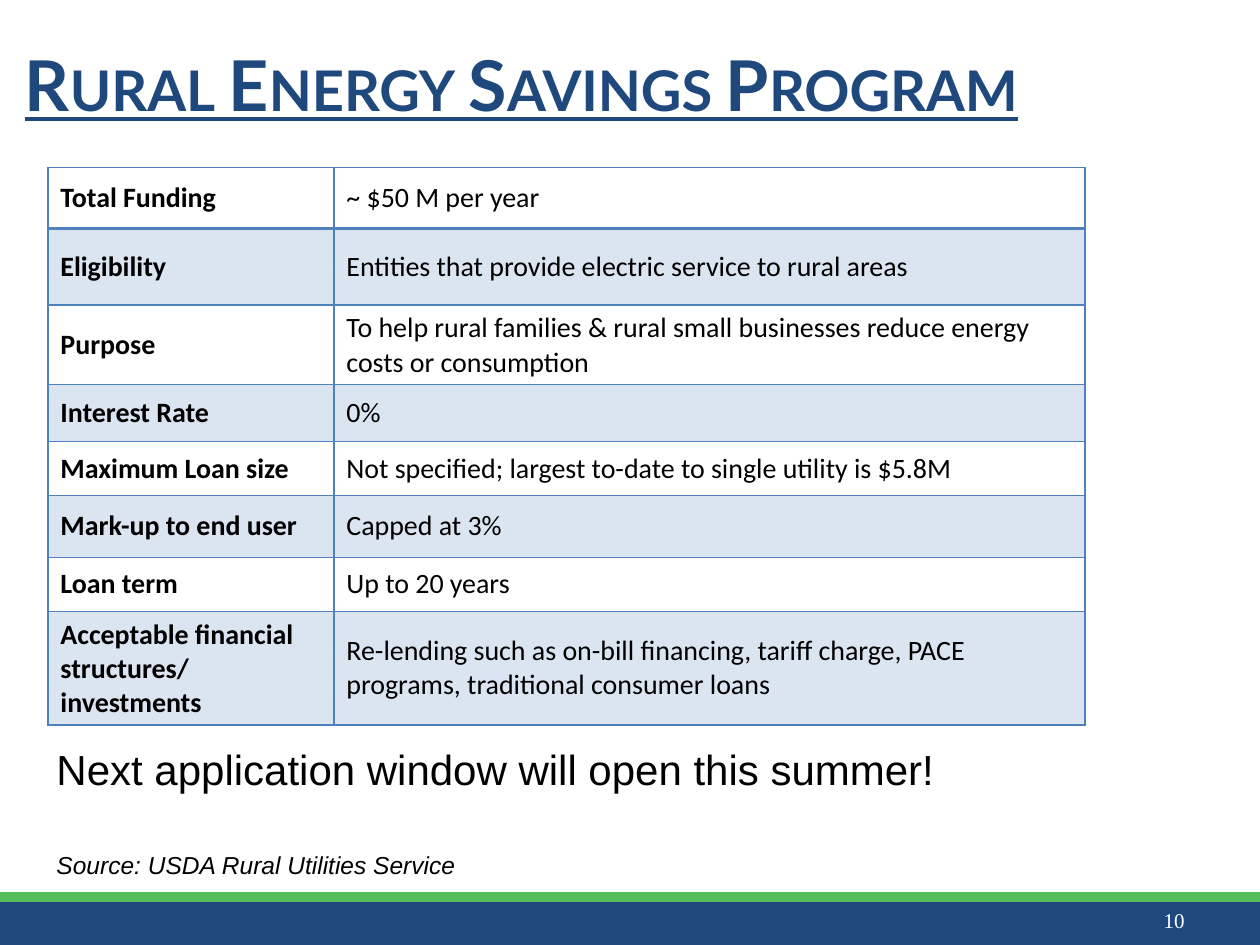
from dataclasses import dataclass

from lxml import etree
from pptx import Presentation
from pptx.dml.color import RGBColor
from pptx.enum.shapes import MSO_SHAPE
from pptx.enum.text import MSO_ANCHOR, PP_ALIGN
from pptx.oxml.ns import qn
from pptx.util import Inches, Pt

RECT = MSO_SHAPE.RECTANGLE
TOP, MIDDLE = MSO_ANCHOR.TOP, MSO_ANCHOR.MIDDLE
LEFT, RIGHT = PP_ALIGN.LEFT, PP_ALIGN.RIGHT


@dataclass(frozen=True)
class Theme:
    navy: str = "1F497D"
    green: str = "55BC5C"
    blue: str = "4F81BD"
    black: str = "000000"
    white: str = "FFFFFF"
    band_opacity: int = 20
    title_font: str = "Lato"
    body_font: str = "Arial"
    table_font: str = "Calibri"
    number_font: str = "Times New Roman"
    title_size: int = 40
    callout_size: int = 24
    table_size: int = 16
    source_size: int = 14
    number_size: int = 12


PROGRAM_FACTS = [
    (0.48, "Total Funding", "~ $50 M per year"),
    (0.61, "Eligibility", "Entities that provide electric service to rural areas"),
    (0.59, "Purpose", "To help rural families & rural small businesses reduce "
                      "energy costs or consumption"),
    (0.45, "Interest Rate", "0%"),
    (0.43, "Maximum Loan size",
     "Not specified; largest to-date to single utility is $5.8M"),
    (0.49, "Mark-up to end user", "Capped at 3%"),
    (0.43, "Loan term", "Up to 20 years"),
    (0.80, "Acceptable financial structures/ investments",
     "Re-lending such as on-bill financing, tariff charge, PACE programs, "
     "traditional consumer loans"),
]


class SlideBuilder:
    def __init__(self, slide, theme):
        self.slide = slide
        self.theme = theme

    def style(self, p, font, size, color, bold=False, italic=False):
        for r in p.runs:
            r.font.name = font
            r.font.size = Pt(size)
            r.font.color.rgb = RGBColor.from_string(color)
            r.font.bold = bold
            r.font.italic = italic

    def text(self, box, lines, anchor=TOP, align=LEFT):
        """Add a wrapped text box and return its paragraphs for styling."""
        sp = self.slide.shapes.add_textbox(*map(Inches, box))
        tf = sp.text_frame
        tf.word_wrap = True
        tf.vertical_anchor = anchor
        tf.text = "\n".join(lines)
        for p in tf.paragraphs:
            p.alignment = align
        return tf.paragraphs

    def bar(self, top, color):
        sp = self.slide.shapes.add_shape(
            RECT, 0, Inches(top), Inches(10), Inches(0.42))
        sp.shadow.inherit = False
        sp.fill.solid()
        sp.fill.fore_color.rgb = RGBColor.from_string(color)
        sp.line.fill.background()

    def borders(self, cell, top, bottom):
        tcPr = cell._tc.get_or_add_tcPr()
        widths = {"a:lnL": 1, "a:lnR": 1, "a:lnT": top, "a:lnB": bottom}
        for i, (tag, width) in enumerate(widths.items()):
            ln = etree.Element(qn(tag), w=str(Pt(width)))
            fill = etree.SubElement(ln, qn("a:solidFill"))
            etree.SubElement(fill, qn("a:srgbClr"), val=self.theme.blue)
            tcPr.insert(i, ln)

    def band(self, cell):
        """Tint a cell with the translucent table colour."""
        cell.fill.solid()
        cell.fill.fore_color.rgb = RGBColor.from_string(self.theme.blue)
        color = cell._tc.tcPr.find(".//" + qn("a:srgbClr"))
        etree.SubElement(color, qn("a:alpha"),
                         val=str(self.theme.band_opacity * 1000))

    def table(self, left, top, widths, facts):
        t = self.theme
        height = sum(fact[0] for fact in facts)
        table = self.slide.shapes.add_table(
            len(facts), len(widths), Inches(left), Inches(top),
            Inches(sum(widths)), Inches(height)).table
        table.first_row = table.horz_banding = False
        for column, width in zip(table.columns, widths):
            column.width = Inches(width)
        for i, (row_height, *texts) in enumerate(facts):
            table.rows[i].height = Inches(row_height)
            for j, text in enumerate(texts):
                cell = table.cell(i, j)
                cell.text = text
                cell.vertical_anchor = MIDDLE
                self.style(cell.text_frame.paragraphs[0], t.table_font,
                           t.table_size, t.black, bold=j == 0)
                if i % 2:
                    self.band(cell)
                else:
                    cell.fill.background()
                self.borders(cell, top=2 if i == 1 else 1,
                             bottom=2 if i == 0 else 1)


def main():
    prs = Presentation()
    prs.slide_width, prs.slide_height = Inches(10), Inches(7.5)
    t = Theme()
    s = SlideBuilder(prs.slides.add_slide(prs.slide_layouts[6]), t)

    title, = s.text((0.1, 0.08, 10.17, 1.17),
                    ["Rural Energy Savings Program"], MIDDLE)
    s.style(title, t.title_font, t.title_size, t.navy, bold=True)
    r = title.runs[0]
    r.font.underline = True
    r._r.get_or_add_rPr().set("cap", "small")

    callout, source = s.text((0.35, 5.85, 9, 1.17),
                             ["Next application window will open this summer!",
                              "Source: USDA Rural Utilities Service"])
    s.style(callout, t.body_font, t.callout_size, t.black)
    s.style(source, t.body_font, t.source_size, t.black, italic=True)
    source.space_before = Pt(32)

    s.bar(7.08, t.green)
    s.bar(7.16, t.navy)
    number, = s.text((7.17, 7.1, 2.33, 0.4), ["10"], MIDDLE, RIGHT)
    s.style(number, t.number_font, t.number_size, t.white)

    s.table(0.38, 1.33, (2.27, 5.96), PROGRAM_FACTS)
    prs.save("out.pptx")


if __name__ == "__main__":
    main()
